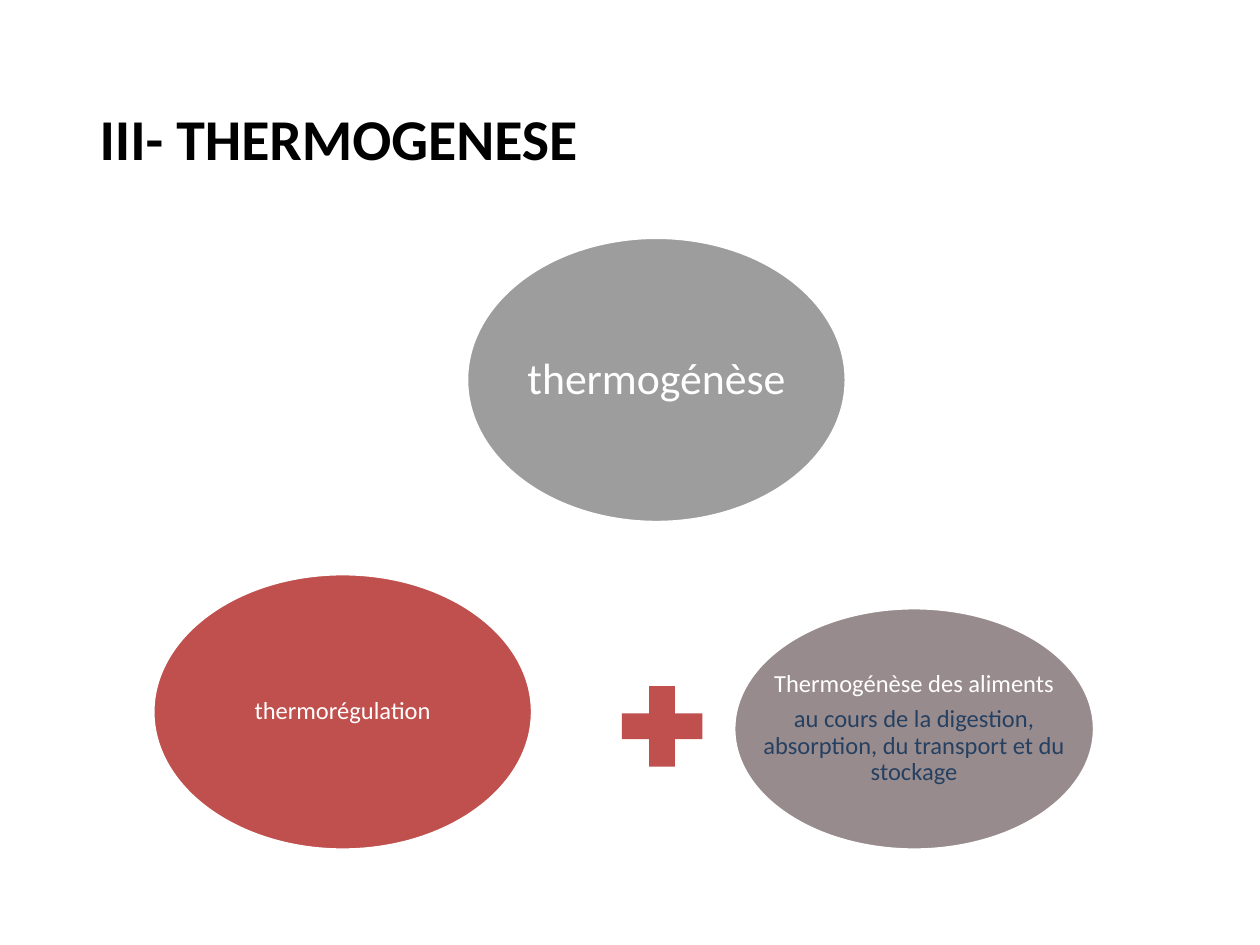
from dataclasses import dataclass

from pptx import Presentation
from pptx.dml.color import RGBColor
from pptx.enum.shapes import MSO_SHAPE as Shape
from pptx.enum.text import MSO_ANCHOR as Anchor, PP_ALIGN as Align
from pptx.util import Inches, Pt

FONT = "Calibri"
COLORS = {
    "black": "000000",
    "white": "FFFFFF",
    "red": "C0504D",
    "gray": "9D9D9D",
    "taupe": "988B8D",
    "navy": "254061",
}
LABEL_MARGIN = 0.15  # space between a bubble's side and its label


@dataclass
class Line:
    text: str
    size: float
    color: str = "white"


@dataclass
class Bubble:
    left: float
    top: float
    width: float
    height: float
    fill: str
    lines: list[Line]


BUBBLES = [
    Bubble(1.22, 4.56, 3, 2.18, "red", [Line("thermorégulation", 14)]),
    Bubble(5.83, 4.83, 2.85, 1.91, "taupe", [
        Line("Thermogénèse des aliments", 14),
        Line("au cours de la digestion, absorption, du transport et du stockage",
             14, "navy"),
    ]),
    Bubble(3.71, 1.89, 3, 2.25, "gray", [Line("thermogénèse", 25)]),
]


def rgb(name: str) -> RGBColor:
    return RGBColor.from_string(COLORS[name])


def format_paragraph(paragraph, size: float, color: str, bold: bool = False) -> None:
    paragraph.line_spacing = 0.9
    for run in paragraph.runs:
        run.font.name = FONT
        run.font.size = Pt(size)
        run.font.bold = bold
        run.font.color.rgb = rgb(color)


def add_filled(slide, kind, left: float, top: float, width: float, height: float,
               fill: str):
    shape = slide.shapes.add_shape(
        kind, Inches(left), Inches(top), Inches(width), Inches(height))
    shape.shadow.inherit = False
    shape.fill.solid()
    shape.fill.fore_color.rgb = rgb(fill)
    shape.line.fill.background()
    return shape


def add_bubble(slide, bubble: Bubble) -> None:
    ellipse = add_filled(slide, Shape.OVAL, bubble.left, bubble.top,
                         bubble.width, bubble.height, bubble.fill)
    ellipse.line.color.rgb = rgb("white")
    ellipse.line.width = Pt(1)

    # The label is wider than the text area inside an ellipse
    label = slide.shapes.add_textbox(
        Inches(bubble.left + LABEL_MARGIN), Inches(bubble.top),
        Inches(bubble.width - 2 * LABEL_MARGIN), Inches(bubble.height))
    frame = label.text_frame
    frame.word_wrap = True
    frame.vertical_anchor = Anchor.MIDDLE
    frame.margin_left = frame.margin_right = Inches(0.02)
    frame.margin_top = frame.margin_bottom = Inches(0.02)
    frame.text = "\n".join(line.text for line in bubble.lines)
    for paragraph, line in zip(frame.paragraphs, bubble.lines):
        paragraph.alignment = Align.CENTER
        paragraph.space_after = Pt(round(0.35 * line.size))
        format_paragraph(paragraph, line.size, line.color)


def main() -> None:
    prs = Presentation()
    prs.slide_width, prs.slide_height = Inches(10), Inches(7.5)
    slide = prs.slides.add_slide(prs.slide_layouts[5])

    # Title
    title = slide.shapes.title
    title.left, title.top = Inches(0.69), Inches(0.4)
    title.width, title.height = Inches(8.62), Inches(1.45)
    title.text_frame.text = "III- THERMOGENESE"
    title.text_frame.vertical_anchor = Anchor.MIDDLE
    heading = title.text_frame.paragraphs[0]
    heading.alignment = Align.LEFT
    format_paragraph(heading, 33, "black", bold=True)

    # Two sources of heat, joined by a plus, below their sum
    for bubble in BUBBLES:
        add_bubble(slide, bubble)
    add_filled(slide, Shape.MATH_PLUS, 4.82, 5.33, 0.87, 0.87, "red")

    prs.save("out.pptx")


if __name__ == "__main__":
    main()
